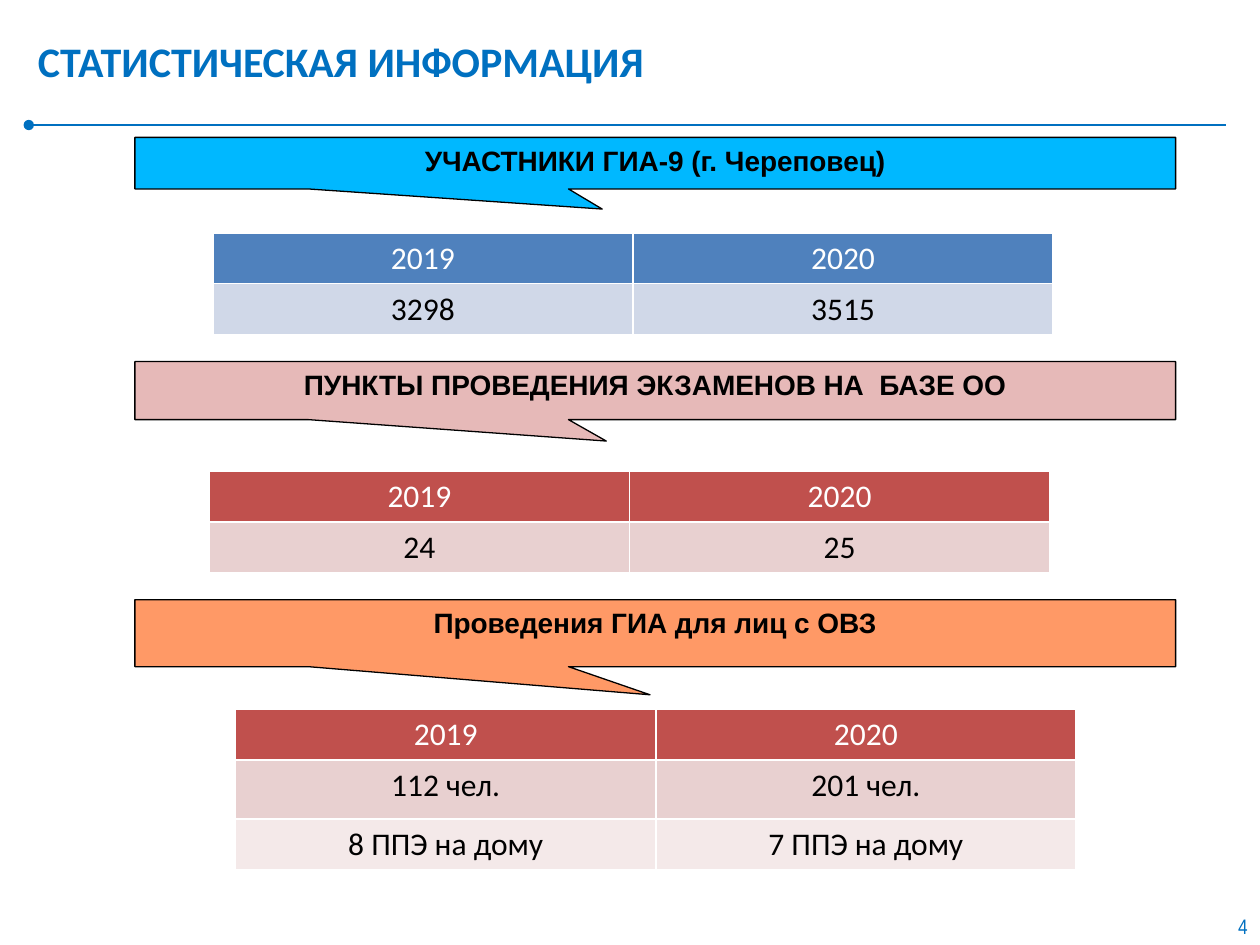
from lxml import etree
from pptx import Presentation
from pptx.dml.color import RGBColor
from pptx.enum.shapes import MSO_CONNECTOR, MSO_SHAPE
from pptx.enum.text import MSO_ANCHOR, MSO_AUTO_SIZE, PP_ALIGN
from pptx.oxml.ns import qn
from pptx.util import Cm, Pt

CALLOUT = MSO_SHAPE.RECTANGULAR_CALLOUT
STRAIGHT = MSO_CONNECTOR.STRAIGHT
TOP, MIDDLE = MSO_ANCHOR.TOP, MSO_ANCHOR.MIDDLE
LEFT, CENTER, RIGHT = PP_ALIGN.LEFT, PP_ALIGN.CENTER, PP_ALIGN.RIGHT
NO_AUTOFIT = MSO_AUTO_SIZE.NONE

THEME = {
    "accent": "0070C0",
    "border": "FFFFFF",
    "outline": "000000",
    "title": {"name": "Calibri", "size": 24, "bold": True, "color": "0070C0"},
    "number": {"name": "Arial Narrow", "size": 12, "bold": False, "color": "0070C0"},
    "callout": {"name": "Arial", "size": 16, "bold": True, "color": "000000"},
    "header": {"name": "Calibri", "size": 18, "bold": False, "color": "FFFFFF"},
    "body": {"name": "Calibri", "size": 18, "bold": False, "color": "000000"},
}

YEARS = ("2019", "2020")
COLUMN_WIDTH = 8.47
ROW_HEIGHT = 1.02
FIRST_TABLE_TOP, TABLE_STEP = 4.7, 4.8
CALLOUT_LEFT, CALLOUT_WIDTH = 2.72, 20.98

RED_ROWS = ("C0504D", "E8D0D0", "F4E9E9")
SECTIONS = [
    {"heading": "УЧАСТНИКИ ГИА-9 (г. Череповец)", "fill": "00B8FF",
     "top": 2.77, "height": 1.04, "tail": (-0.051, 0.89), "table_left": 4.29,
     "rows": [YEARS, ("3298", "3515")], "row_fills": ("4F81BD", "D0D8E8"),
     "row_heights": (ROW_HEIGHT, ROW_HEIGHT)},
    {"heading": "ПУНКТЫ ПРОВЕДЕНИЯ ЭКЗАМЕНОВ НА  БАЗЕ ОО", "fill": "E6B9B8",
     "top": 7.29, "height": 1.17, "tail": (-0.047, 0.87), "table_left": 4.22,
     "rows": [YEARS, ("24", "25")], "row_fills": RED_ROWS,
     "row_heights": (ROW_HEIGHT, ROW_HEIGHT)},
    {"heading": "Проведения ГИА для лиц с ОВЗ", "fill": "FF9966",
     "top": 12.09, "height": 1.35, "tail": (-0.005, 0.92), "table_left": 4.75,
     "rows": [YEARS, ("112 чел.", "201 чел."), ("8 ППЭ на дому", "7 ППЭ на дому")],
     "row_fills": RED_ROWS, "row_heights": (ROW_HEIGHT, 1.19, ROW_HEIGHT)},
]


def write_text(text_frame, text, style, alignment):
    text_frame.text = text
    paragraph = text_frame.paragraphs[0]
    paragraph.alignment = alignment
    font = paragraph.runs[0].font
    values = {"name": style["name"], "size": Pt(style["size"]), "bold": style["bold"]}
    for attribute, value in values.items():
        setattr(font, attribute, value)
    font.color.rgb = RGBColor.from_string(style["color"])


def add_borders(cell):
    """Draw a thin line on all four sides; borders must precede the cell fill."""
    properties = cell._tc.get_or_add_tcPr()
    for side in ("a:lnL", "a:lnR", "a:lnT", "a:lnB"):
        line = etree.SubElement(properties, qn(side), w=str(Pt(1)))
        fill = etree.SubElement(line, qn("a:solidFill"))
        etree.SubElement(fill, qn("a:srgbClr"), val=THEME["border"])


presentation = Presentation()
presentation.slide_width, presentation.slide_height = Cm(25.4), Cm(19.05)
slide = presentation.slides.add_slide(presentation.slide_layouts[5])

# Title and rule
title = slide.shapes.title
title_box = {"left": Cm(0.51), "top": Cm(0.33), "width": Cm(22.86), "height": Cm(1.8)}
for attribute, value in title_box.items():
    setattr(title, attribute, value)
title.text_frame.vertical_anchor = MIDDLE
title.text_frame.auto_size = NO_AUTOFIT
write_text(title.text_frame, "СТАТИСТИЧЕСКАЯ ИНФОРМАЦИЯ", THEME["title"], LEFT)

rule = slide.shapes.add_connector(STRAIGHT, Cm(0.58), Cm(2.52), Cm(24.71), Cm(2.52))
rule.line.color.rgb = RGBColor.from_string(THEME["accent"])
rule.line.width = Pt(1.25)
etree.SubElement(rule.line._get_or_add_ln(), qn("a:headEnd"), type="oval")
etree.SubElement(rule._element.spPr, qn("a:effectLst"))

# Slide number
number = slide.shapes.add_textbox(Cm(24.1), Cm(18.29), Cm(1.3), Cm(0.76))
number.text_frame.word_wrap = True
write_text(number.text_frame, "4", THEME["number"], RIGHT)

# Callout headings, each with its table
for section_index, section in enumerate(SECTIONS):
    callout = slide.shapes.add_shape(CALLOUT, Cm(CALLOUT_LEFT), Cm(section["top"]),
                                     Cm(CALLOUT_WIDTH), Cm(section["height"]))
    callout.shadow.inherit = False
    callout.adjustments[0], callout.adjustments[1] = section["tail"]
    callout.fill.solid()
    callout.fill.fore_color.rgb = RGBColor.from_string(section["fill"])
    callout.line.color.rgb = RGBColor.from_string(THEME["outline"])
    callout.line.width = Pt(0.75)
    callout.text_frame.vertical_anchor = TOP
    write_text(callout.text_frame, section["heading"], THEME["callout"], CENTER)

    rows, heights = section["rows"], section["row_heights"]
    table = slide.shapes.add_table(
        len(rows), len(YEARS), Cm(section["table_left"]),
        Cm(FIRST_TABLE_TOP + section_index * TABLE_STEP),
        Cm(COLUMN_WIDTH * len(YEARS)), Cm(sum(heights))).table
    for column in table.columns:
        column.width = Cm(COLUMN_WIDTH)
    for row_index, values in enumerate(rows):
        table.rows[row_index].height = Cm(heights[row_index])
        style = THEME["body" if row_index else "header"]
        for column_index, value in enumerate(values):
            cell = table.cell(row_index, column_index)
            add_borders(cell)
            cell.fill.solid()
            cell.fill.fore_color.rgb = RGBColor.from_string(section["row_fills"][row_index])
            write_text(cell.text_frame, value, style, CENTER)

presentation.save("out.pptx")
